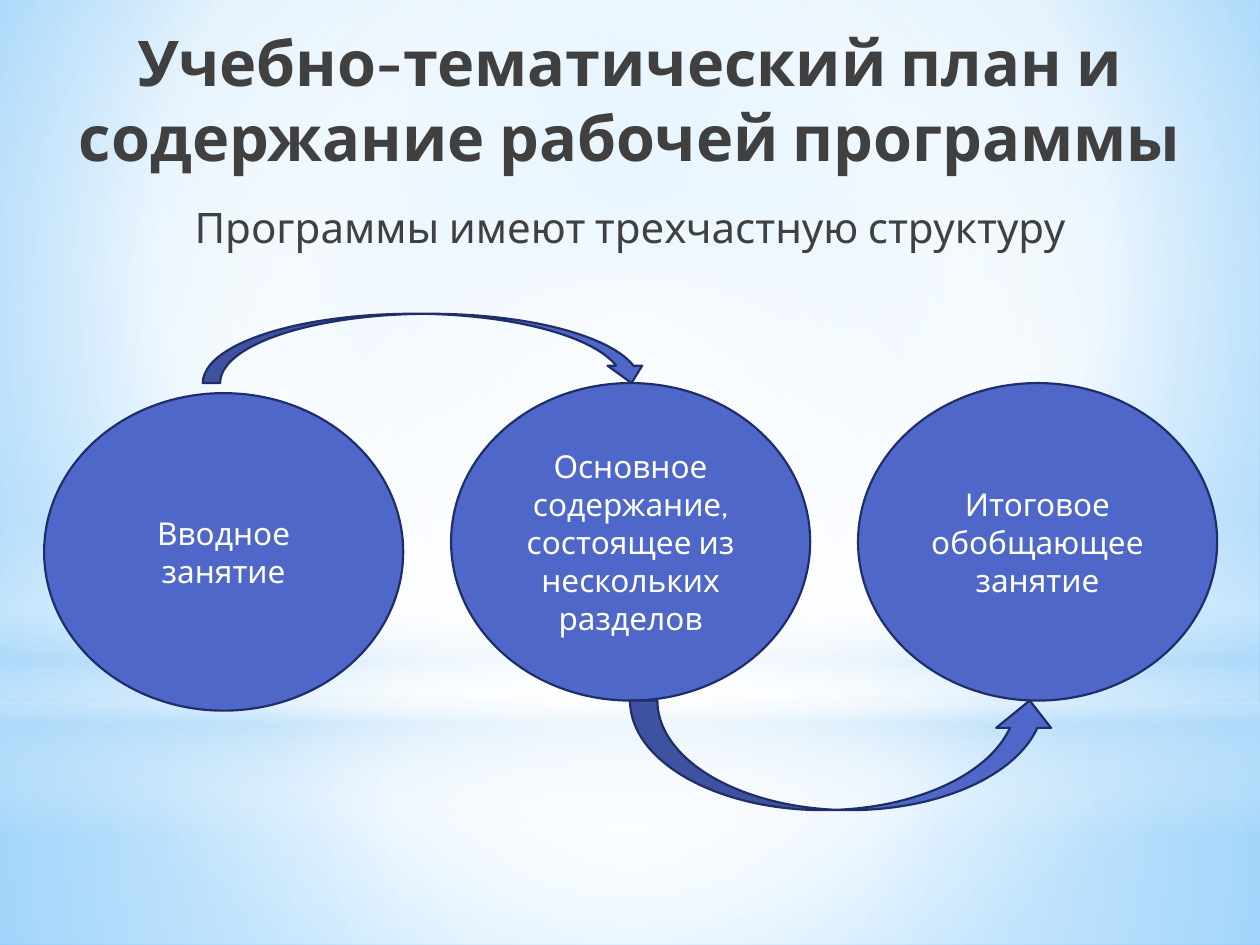
import pptx
import pptx.util
from lxml import etree
from pptx.dml.color import RGBColor
from pptx.enum.shapes import MSO_SHAPE
from pptx.enum.text import MSO_ANCHOR, PP_ALIGN
from pptx.oxml.ns import qn
from pptx.util import Inches, Pt

FONT = "Cabin"
GREY = RGBColor(0x40, 0x40, 0x40)
BLUE = RGBColor(0x4E, 0x67, 0xC8)
NAVY = RGBColor(0x1F, 0x2E, 0x69)
WHITE = RGBColor(0xFF, 0xFF, 0xFF)

TITLE = "Учебно-тематический план и содержание рабочей программы"
SUBTITLE = "Программы имеют трехчастную структуру"
# text, top
PARTS = [
    ("Вводное занятие", 3.12),
    ("Основное содержание, состоящее из нескольких разделов", 3.04),
    ("Итоговое обобщающее занятие", 3.04),
]
PART_LEFT, PART_STEP, PART_W, PART_H = 0.35, 3.23, 2.85, 2.52
ARROWS = [
    (MSO_SHAPE.CURVED_DOWN_ARROW, (1.61, 2.49, 3.54, 0.55)),
    (MSO_SHAPE.CURVED_UP_ARROW, (5, 5.56, 3.39, 0.87)),
]

# Gradient stops: position %, colour, opacity %
CENTRE = (50, 50, 50, 50)
BACKGROUND = [(0, "9ED5FF", 100), (60, "FFFFFF", 100), (100, "5BB9FF", 100)]
# shape, box, stops, focus rectangle (None: linear, top to bottom)
GLOWS = [
    (MSO_SHAPE.RECTANGLE, (0, 5.58, 10, 1.92),
     [(0, "FFFFFF", 91), (37, "FFFFFF", 76), (100, "B4DCFA", 79)], CENTRE),
    (MSO_SHAPE.RECTANGLE, (0, 0, 10, 5.58),
     [(0, "FFFFFF", 89), (48, "FFFFFF", 62), (100, "B4DCFA", 79)], CENTRE),
    (MSO_SHAPE.RECTANGLE, (0, 4.12, 10, 2.5),
     [(0, "FFFFFF", 0), (29, "FFFFFF", 30), (45, "B4DCFA", 40),
      (55, "FFFFFF", 26), (65, "B4DCFA", 60), (100, "FFFFFF", 0)], None),
    (MSO_SHAPE.OVAL, (0, 1.75, 10, 5.58),
     [(0, "FFFFFF", 100), (56, "FFFFFF", 0)], CENTRE),
]


def set_gradient(fill, element, stops, focus):
    """Give element a gradient fill; focus is left, top, right, bottom in %."""
    fill.solid()
    solid = next(element.iter(qn("a:solidFill")))
    grad = etree.Element(qn("a:gradFill"), rotWithShape="1")
    gs_list = etree.SubElement(grad, qn("a:gsLst"))
    for position, colour, opacity in stops:
        gs = etree.SubElement(gs_list, qn("a:gs"), pos=str(position * 1000))
        clr = etree.SubElement(gs, qn("a:srgbClr"), val=colour)
        if opacity < 100:
            etree.SubElement(clr, qn("a:alpha"), val=str(opacity * 1000))
    if focus:
        circle = etree.SubElement(grad, qn("a:path"), path="circle")
        sides = {side: str(v * 1000) for side, v in zip("ltrb", focus)}
        etree.SubElement(circle, qn("a:fillToRect"), sides)
    else:
        etree.SubElement(grad, qn("a:lin"), ang="5400000", scaled="0")
    solid.getparent().replace(solid, grad)


def add_shape(s, kind, box):
    sp = s.shapes.add_shape(kind, *map(Inches, box))
    sp.shadow.inherit = False
    return sp


def paint(sp):
    sp.fill.solid()
    sp.fill.fore_color.rgb = BLUE
    sp.line.color.rgb = NAVY
    sp.line.width = Pt(1.25)


def write(sp, text, size, colour, anchor, bold=False):
    tf = sp.text_frame
    tf.word_wrap = True
    tf.vertical_anchor = anchor
    p = tf.paragraphs[0]
    p.text = text
    p.alignment = PP_ALIGN.CENTER
    p.space_before = Pt(0)
    p.font.name = FONT
    p.font.size = Pt(size)
    p.font.bold = bold
    p.font.color.rgb = colour
    return p


def place(sp, box):
    sp.left, sp.top, sp.width, sp.height = map(Inches, box)


def main():
    prs = pptx.Presentation()
    prs.slide_width, prs.slide_height = Inches(10), Inches(7.5)
    s = prs.slides.add_slide(prs.slide_layouts[1])
    title, body = s.placeholders

    set_gradient(s.background.fill, s.element, BACKGROUND, (20, 10, 20, 60))
    for kind, box, stops, focus in GLOWS:
        sp = add_shape(s, kind, box)
        set_gradient(sp.fill, sp.element, stops, focus)
        sp.line.fill.background()
        title.element.addprevious(sp.element)  # keep behind the text

    place(title, (0, 0.21, 10, 1.15))
    write(title, TITLE, 36, GREY, MSO_ANCHOR.MIDDLE, bold=True)
    place(body, (0.5, 1.55, 9, 0.71))
    p = write(body, SUBTITLE, 24, GREY, MSO_ANCHOR.TOP)
    pPr = p._p.get_or_add_pPr()
    pPr.set("marL", "0")
    pPr.set("indent", "0")
    spacing = pPr.find(qn("a:spcBef"))
    spacing.addnext(etree.Element(qn("a:buNone")))

    for i, (text, top) in enumerate(PARTS):
        left = PART_LEFT + i * PART_STEP
        sp = add_shape(s, MSO_SHAPE.OVAL, (left, top, PART_W, PART_H))
        paint(sp)
        write(sp, text, 18, WHITE, MSO_ANCHOR.MIDDLE)
    for kind, box in ARROWS:
        paint(add_shape(s, kind, box))

    prs.save("out.pptx")


if __name__ == "__main__":
    main()
